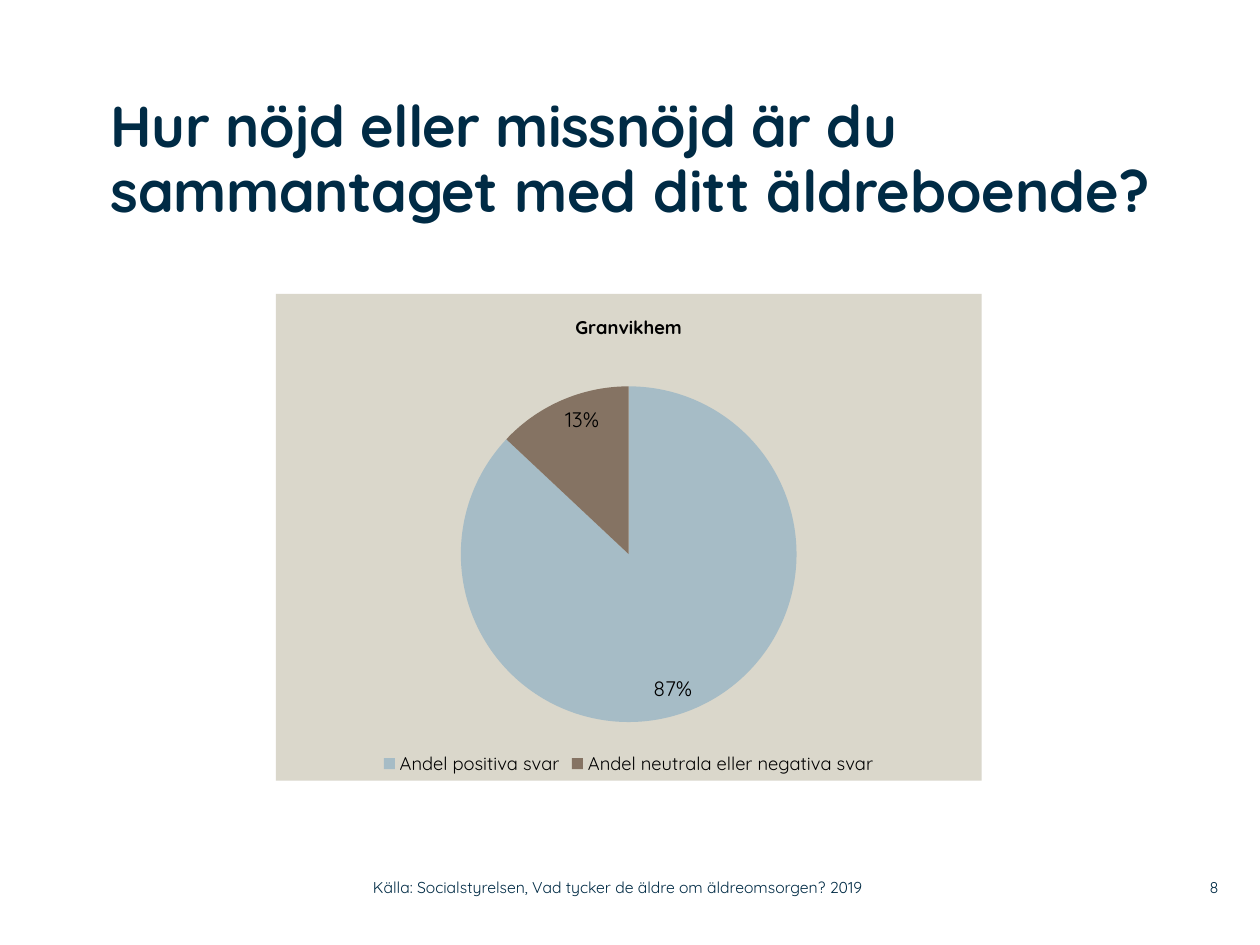
import pptx
import pptx.chart.data
import pptx.dml.color
import pptx.enum.chart
import pptx.enum.text
import pptx.oxml
import pptx.oxml.ns
import pptx.util

WIDTH, HEIGHT = 10, 7.5
FONT = "Quicksand"
NAVY, BLACK = "002B45", "000000"
FOOTER_TOP, FOOTER_HEIGHT = 0.919, 0.039


def color(value):
    return pptx.dml.color.RGBColor.from_string(value)


def format_font(font, size, ink=BLACK, bold=False):
    font.name = FONT
    font.size = pptx.util.Pt(size)
    font.bold = bold
    font.color.rgb = color(ink)


def add_text(paragraph, text, size, ink=NAVY, bold=False, spacing=0):
    run = paragraph.add_run()
    run.text = text
    format_font(run.font, size, ink, bold)
    if spacing:
        run._r.get_or_add_rPr().set("spc", str(round(spacing * 100)))


class SlideBuilder:
    def __init__(self, presentation):
        self.slide = presentation.slides.add_slide(presentation.slide_layouts[6])
        self.slide.background.fill.solid()
        self.slide.background.fill.fore_color.rgb = color("FFFFFF")

    def place(self, left, top, width, height):
        return [pptx.util.Inches(share * side) for share, side in
                zip((left, top, width, height), (WIDTH, HEIGHT) * 2)]

    def text_box(self, area, parts, align="LEFT", anchor="MIDDLE", line_spacing=1.0, **style):
        frame = self.slide.shapes.add_textbox(*self.place(*area)).text_frame
        frame.word_wrap = True
        frame.margin_left = frame.margin_right = frame.margin_top = frame.margin_bottom = 0
        frame.vertical_anchor = pptx.enum.text.MSO_ANCHOR[anchor]
        paragraph = frame.paragraphs[0]
        paragraph.alignment = pptx.enum.text.PP_ALIGN[align]
        paragraph.line_spacing = line_spacing
        for text, spacing in parts:
            add_text(paragraph, text, spacing=spacing, **style)

    def pie_chart(self, area, title, answers, background, plot):
        data = pptx.chart.data.CategoryChartData()
        data.categories = [name for name, value, fill in answers]
        data.add_series("Series 1", [value for name, value, fill in answers])
        chart = self.slide.shapes.add_chart(
            pptx.enum.chart.XL_CHART_TYPE.PIE, *self.place(*area), data).chart
        format_font(chart.font, 18)
        chart.has_title = True
        add_text(chart.chart_title.text_frame.paragraphs[0], title, 10.5, BLACK, bold=True)
        chart.chart_title.include_in_layout = False
        chart.has_legend = True
        chart.legend.position = pptx.enum.chart.XL_LEGEND_POSITION.BOTTOM
        chart.legend.include_in_layout = False
        format_font(chart.legend.font, 10.5)

        pie = chart.plots[0]
        pie.vary_by_categories = True
        for index, (name, value, fill) in enumerate(answers):
            point = pie.series[0].points[index]
            point.format.fill.solid()
            point.format.fill.fore_color.rgb = color(fill)
            point.format.line.fill.background()
        labels = pie.series[0].data_labels
        labels.show_percentage = True
        labels.show_value = False
        labels.number_format = "0%"
        labels.number_format_is_linked = False
        labels.position = pptx.enum.chart.XL_LABEL_POSITION.INSIDE_END
        format_font(labels.font, 12)
        self.style_chart_area(chart, background, plot)

    def style_chart_area(self, chart, background, plot):
        namespaces = pptx.oxml.ns.nsdecls("c", "a")
        root = chart.element
        area = root.find(pptx.oxml.ns.qn("c:chart"))
        area.addnext(pptx.oxml.parse_xml(
            f'<c:spPr {namespaces}><a:solidFill><a:srgbClr val="{background}"/>'
            '</a:solidFill><a:ln><a:noFill/></a:ln></c:spPr>'))
        plot_area = area.find(pptx.oxml.ns.qn("c:plotArea"))
        for layout in plot_area.findall(pptx.oxml.ns.qn("c:layout")):
            plot_area.remove(layout)
        shares = "".join(f'<c:{key} val="{value}"/>' for key, value in zip("xywh", plot))
        plot_area.insert(0, pptx.oxml.parse_xml(
            f'<c:layout {namespaces}><c:manualLayout><c:layoutTarget val="inner"/>'
            '<c:xMode val="edge"/><c:yMode val="edge"/>'
            f'{shares}</c:manualLayout></c:layout>'))


def main():
    presentation = pptx.Presentation()
    presentation.slide_width = pptx.util.Inches(WIDTH)
    presentation.slide_height = pptx.util.Inches(HEIGHT)
    builder = SlideBuilder(presentation)
    builder.text_box((0.92, FOOTER_TOP, 0.047, FOOTER_HEIGHT), [("8", 0)], align="RIGHT", size=9)
    builder.text_box((0.296, FOOTER_TOP, 0.443, FOOTER_HEIGHT),
                     [("Källa: Socialstyrelsen, Vad tycker de äldre om äldreomsorgen? 2019", 0)],
                     size=9)
    builder.text_box((0.088, 0.1, 0.883, 0.19),
                     [("Hur nöjd eller missnöjd är du sammantaget ", -0.3),
                      ("med ditt äldreboende?", 0)],
                     anchor="TOP", line_spacing=0.95, size=33, bold=True)
    builder.pie_chart((0.219, 0.311, 0.56, 0.515), "Granvikhem",
                      [("Andel positiva svar", 87, "A6BCC6"),
                       ("Andel neutrala eller negativa svar", 13, "857363")],
                      background="DAD7CB", plot=(0.26, 0.19, 0.48, 0.69))
    presentation.save("out.pptx")


if __name__ == "__main__":
    main()
